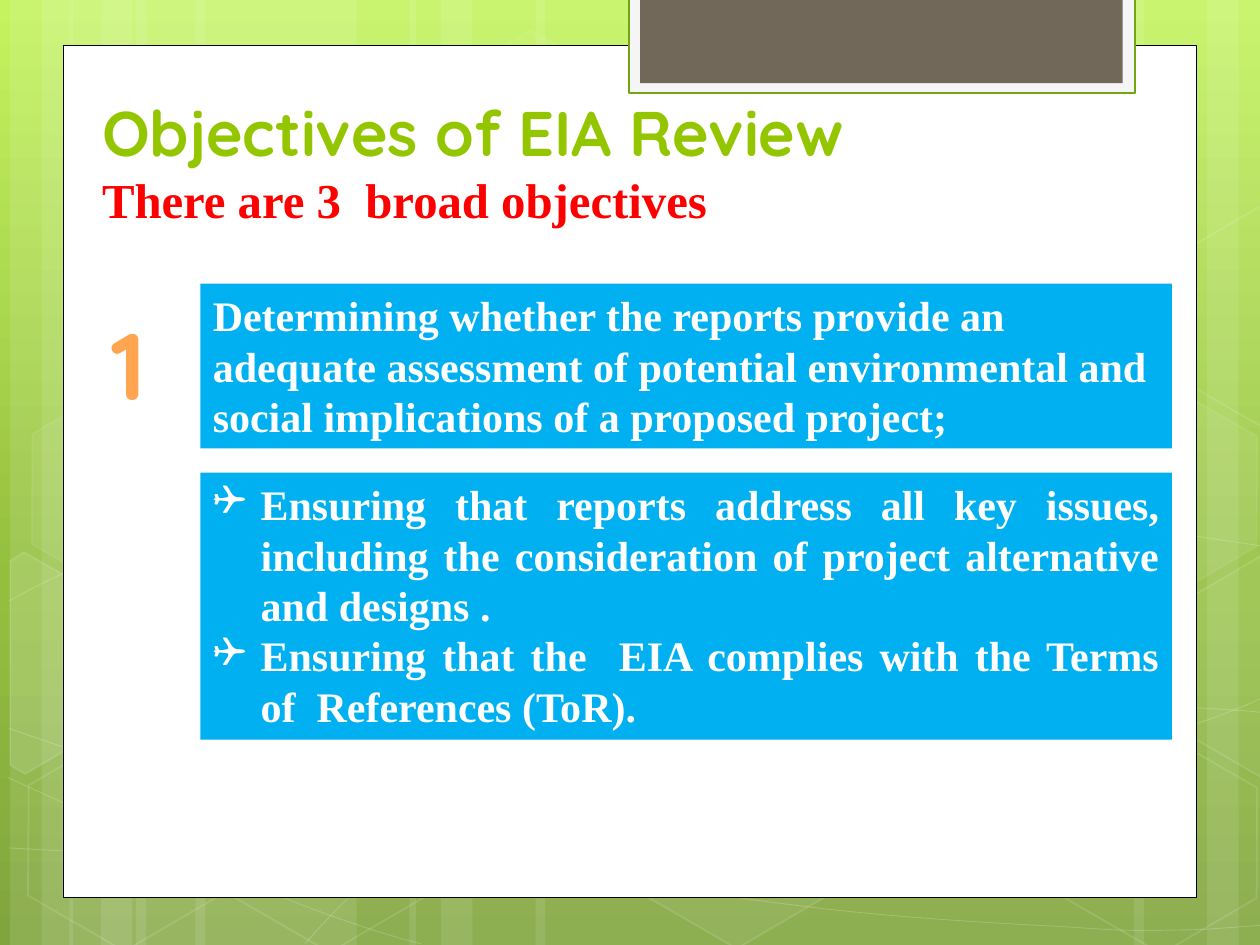
import math

import pptx
import pptx.util
import pptx.dml.color
import pptx.enum.shapes
import pptx.enum.text
import pptx.oxml.ns
import lxml.etree

Inches, Pt = pptx.util.Inches, pptx.util.Pt
SHAPE = pptx.enum.shapes.MSO_SHAPE
ALIGN = pptx.enum.text.PP_ALIGN
ANCHOR = pptx.enum.text.MSO_ANCHOR
FIT = pptx.enum.text.MSO_AUTO_SIZE
qn = pptx.oxml.ns.qn

COLORS = {
    "white": "FFFFFF", "black": "000000", "frame": "F5F5F5", "green": "74A510",
    "brown": "71685A", "title": "94C600", "red": "FF0000", "blue": "00B0F0",
}
SKY = [(0, "C3F35F"), (62, "93BF3F"), (100, "81A53E")]
ORANGE = [(0, "8F5200"), (78, "FFA44F"), (100, "FFF6F1")]
SERIF, ROUND = "Times New Roman", "Quicksand"
TILT = 30

STRIPES = [(x + dx, w, 0) for dx in (0, 0.47) for x, w in ((1.08, 1.75), (0.08, 0.5), (0.33, 0.83))]
STRIPES += [(7.33, 1.75, 180), (9.58, 0.5, 180), (9, 0.83, 180)]
STRIPES += [(4.25, 3.08, 0), (3.25, 0.5, 0), (3.5, 0.83, 0)]

CURVES = [
    [(0.07, 6.73), (0.61, 6.76, 1.15, 6.79, 1.9, 6.78), (2.65, 6.77, 3.58, 6.75, 4.58, 6.65),
     (5.58, 6.55, 7, 6.36, 7.92, 6.17), (8.83, 5.98, 9.77, 5.68, 10.07, 5.51)],
    [(0.07, 4.77), (0.36, 4.61, 0.65, 4.46, 1.21, 4.31), (1.78, 4.16, 2.59, 3.94, 3.47, 3.87),
     (4.36, 3.8, 5.44, 3.79, 6.54, 3.87), (7.64, 3.95, 9.47, 4.26, 10.07, 4.34)],
    [(0.06, 6.17), (1.27, 6.72, 2.47, 7.27, 3.34, 7.49)],
    [(0.07, 5.78), (0.38, 5.89, 0.7, 6, 1.28, 6.16), (1.86, 6.31, 2.73, 6.56, 3.57, 6.73),
     (4.4, 6.9, 5.45, 7.08, 6.28, 7.18), (7.11, 7.29, 8, 7.33, 8.53, 7.36),
     (9.05, 7.4, 9.19, 7.38, 9.45, 7.38), (9.71, 7.37, 9.89, 7.35, 10.07, 7.34)],
    [(2.42, 7.49), (2.6, 7.29, 2.78, 7.09, 3.02, 6.91), (3.26, 6.73, 3.6, 6.53, 3.88, 6.39),
     (4.16, 6.25, 4.33, 6.19, 4.7, 6.09), (5.06, 5.99, 5.73, 5.85, 6.08, 5.78),
     (6.44, 5.71, 6.49, 5.71, 6.8, 5.69), (7.11, 5.66, 7.6, 5.63, 7.94, 5.62),
     (8.29, 5.61, 8.86, 5.62, 8.86, 5.62), (9.53, 5.62),
     (9.71, 5.63, 9.88, 5.64, 9.97, 5.65), (10.06, 5.66, 10.03, 5.65, 10.06, 5.66)],
]
LEFT_CUT = [(0.08, 4.45), (0.19, 4.38), (0.96, 4.82), (0.95, 5.7), (0.2, 6.14), (0.08, 6.07)]
RIGHT_CUT = [(9.26, 4.85), (10.01, 4.41), (10.09, 4.46), (10.09, 6.13), (10.02, 6.17), (9.26, 5.73)]
UPPER_CUT = [(x, y - 2.78) for x, y in RIGHT_CUT]
HEXAGONS_LEFT = [(0.11, 5.91, None, 12), (0.14, 3.12, 7, 8), (1.74, 5.92, None, 12)]
HEXAGONS_RIGHT = [(7.53, 4.53, 10, 12), (8.34, 5.93, None, 12), (8.34, 3.14, 7, 8)]
HEXAGONS_MIDDLE = [(3.34, 0.36, 4, 8), (4.97, 5.89, 6, 12)]


def rgb(name):
    return pptx.dml.color.RGBColor.from_string(COLORS[name])


def turn_back(points, cx, cy):
    c, s = math.cos(math.radians(TILT)), math.sin(math.radians(TILT))
    return [(cx + (x - cx) * c + (y - cy) * s, cy - (x - cx) * s + (y - cy) * c) for x, y in points]


class Deck:
    def __init__(self, prs):
        self.slide = prs.slides.add_slide(prs.slide_layouts[5])
        self.shapes = self.slide.shapes

    def paint(self, fmt, name, alpha=None):
        fmt.solid()
        fmt.fore_color.rgb = rgb(name)
        if alpha is not None:
            clr = fmt._xPr.find(qn("a:solidFill"))[0]
            lxml.etree.SubElement(clr, qn("a:alpha"), val=str(alpha * 1000))

    def gradient(self, fill, stops, root):
        fill.gradient()
        fill.gradient_angle = 270
        gs_list = root.find(".//" + qn("a:gsLst"))
        for gs in list(gs_list):
            gs_list.remove(gs)
        for pos, color in stops:
            gs = lxml.etree.SubElement(gs_list, qn("a:gs"), pos=str(pos * 1000))
            lxml.etree.SubElement(gs, qn("a:srgbClr"), val=color)

    def background(self, stops):
        self.gradient(self.slide.background.fill, stops, self.slide._element)

    def style(self, sp, fill=None, alpha=None, line=None, width=1, line_alpha=None):
        sp.shadow.inherit = False
        if fill:
            self.paint(sp.fill, fill, alpha)
        else:
            sp.fill.background()
        if line:
            sp.line.width = Pt(width)
            self.paint(sp.line.fill, line, line_alpha)
        else:
            sp.line.fill.background()
        return sp

    def shape(self, x, y, w, h, kind=SHAPE.RECTANGLE, **look):
        sp = self.shapes.add_shape(kind, Inches(x), Inches(y), Inches(w), Inches(h))
        return self.style(sp, **look)

    def hexagon(self, x, y, alpha, line_alpha):
        sp = self.shape(x, y, 1.75, 1.52, SHAPE.HEXAGON, fill="white" if alpha else None,
                        alpha=alpha, line="white", line_alpha=line_alpha)
        sp.adjustments[0], sp.adjustments[1] = 0.285, 1.155
        sp.rotation = TILT

    def freeform(self, points, close):
        pts = [(Inches(x), Inches(y)) for x, y in points]
        builder = self.shapes.build_freeform(*pts[0])
        builder.add_line_segments(pts[1:], close=close)
        return builder.convert_to_shape()

    def cut_hexagon(self, points, cx, cy, alpha):
        sp = self.freeform(turn_back(points, cx, cy), True)
        self.style(sp, fill="white" if alpha else None, alpha=alpha, line="white", line_alpha=12)
        sp.rotation = TILT

    def curve(self, segments):
        points = [xy for seg in segments for xy in zip(seg[::2], seg[1::2])]
        sp = self.freeform(points, False)
        lines = iter(sp._element.findall(".//" + qn("a:lnTo")))
        for seg in segments[1:]:
            first = next(lines)
            if len(seg) == 6:
                first.tag = qn("a:cubicBezTo")
                for _ in range(2):
                    ln = next(lines)
                    first.append(ln[0])
                    ln.getparent().remove(ln)
        self.style(sp, line="white", width=0.5, line_alpha=20)

    def title(self, x, y, w, h, lines):
        sp = self.shapes.title
        self.shapes._spTree.append(sp._element)
        sp.left, sp.top, sp.width, sp.height = Inches(x), Inches(y), Inches(w), Inches(h)
        tf = sp.text_frame
        tf.word_wrap, tf.auto_size, tf.vertical_anchor = True, FIT.NONE, ANCHOR.BOTTOM
        p = tf.paragraphs[0]
        p.alignment = ALIGN.LEFT
        for i, (text, size, font, color) in enumerate(lines):
            if i:
                p.add_line_break()
            r = p.add_run()
            r.text = text
            r.font.size, r.font.name, r.font.bold = Pt(size), font, True
            r.font.color.rgb = rgb(color)

    def panel(self, y, h, texts, bullet=None):
        tf = self.shape(1.59, y, 7.71, h, fill="blue").text_frame
        tf.word_wrap, tf.auto_size, tf.vertical_anchor = True, FIT.SHAPE_TO_FIT_TEXT, ANCHOR.TOP
        for i, text in enumerate(texts):
            p = tf.add_paragraph() if i else tf.paragraphs[0]
            p.text = text
            p.alignment = ALIGN.JUSTIFY if bullet else ALIGN.LEFT
            p.font.size, p.font.name, p.font.bold = Pt(24), SERIF, True
            p.font.color.rgb = rgb("white")
            if bullet:
                pPr = p._p.get_or_add_pPr()
                pPr.set("marL", str(Inches(0.38)))
                pPr.set("indent", str(-Inches(0.38)))
                pPr.insert(0, pPr.makeelement(qn("a:buFont"), {"typeface": "Wingdings"}))
                pPr.insert(1, pPr.makeelement(qn("a:buChar"), {"char": bullet}))

    def number(self, x, y, w, h, text):
        tf = self.shapes.add_textbox(Inches(x), Inches(y), Inches(w), Inches(h)).text_frame
        tf.word_wrap, tf.auto_size = False, FIT.SHAPE_TO_FIT_TEXT
        p = tf.paragraphs[0]
        p.alignment = ALIGN.CENTER
        r = p.add_run()
        r.text = text
        r.font.size, r.font.name, r.font.bold = Pt(54), ROUND, True
        self.gradient(r.font.fill, ORANGE, r._r)


def main():
    prs = pptx.Presentation()
    prs.slide_width, prs.slide_height = Inches(10), Inches(7.5)
    deck = Deck(prs)
    deck.background(SKY)
    for x, w, turn in STRIPES:
        deck.shape(x, 0, w, 7.5, fill="white", alpha=10).rotation = turn
    for segments in CURVES:
        deck.curve(segments)
    for hexagon in HEXAGONS_MIDDLE:
        deck.hexagon(*hexagon)
    deck.cut_hexagon(LEFT_CUT, 0.36, 5.35, 10)
    for hexagon in HEXAGONS_LEFT + HEXAGONS_RIGHT:
        deck.hexagon(*hexagon)
    deck.cut_hexagon(RIGHT_CUT, 9.85, 5.2, 4)
    deck.cut_hexagon(UPPER_CUT, 9.85, 2.41, None)
    deck.shape(0.5, 0.36, 9, 6.76, fill="white", line="black", width=0.5)
    deck.shape(4.99, -0.02, 4.02, 0.76, fill="frame", line="green", width=1.25)
    deck.shape(5.08, -0.02, 3.83, 0.68, fill="brown")
    deck.title(0.71, 1.08, 8.33, 0.78, [
        ("Objectives of EIA Review", 36, ROUND, "title"),
        ("There are 3  broad objectives", 27.9, SERIF, "red"),
    ])
    deck.panel(2.25, 1.31, ["Determining whether the reports provide an adequate assessment of potential "
                            "environmental and social implications of a proposed project;"])
    deck.panel(3.75, 2.12, [
        "Ensuring that reports address all key issues, including the consideration of project "
        "alternative and designs .",
        "Ensuring that the  EIA complies with the Terms of  References (ToR).",
    ], bullet="❑")
    deck.number(0.71, 2.38, 0.63, 1.01, "1")
    prs.save("out.pptx")


if __name__ == "__main__":
    main()
